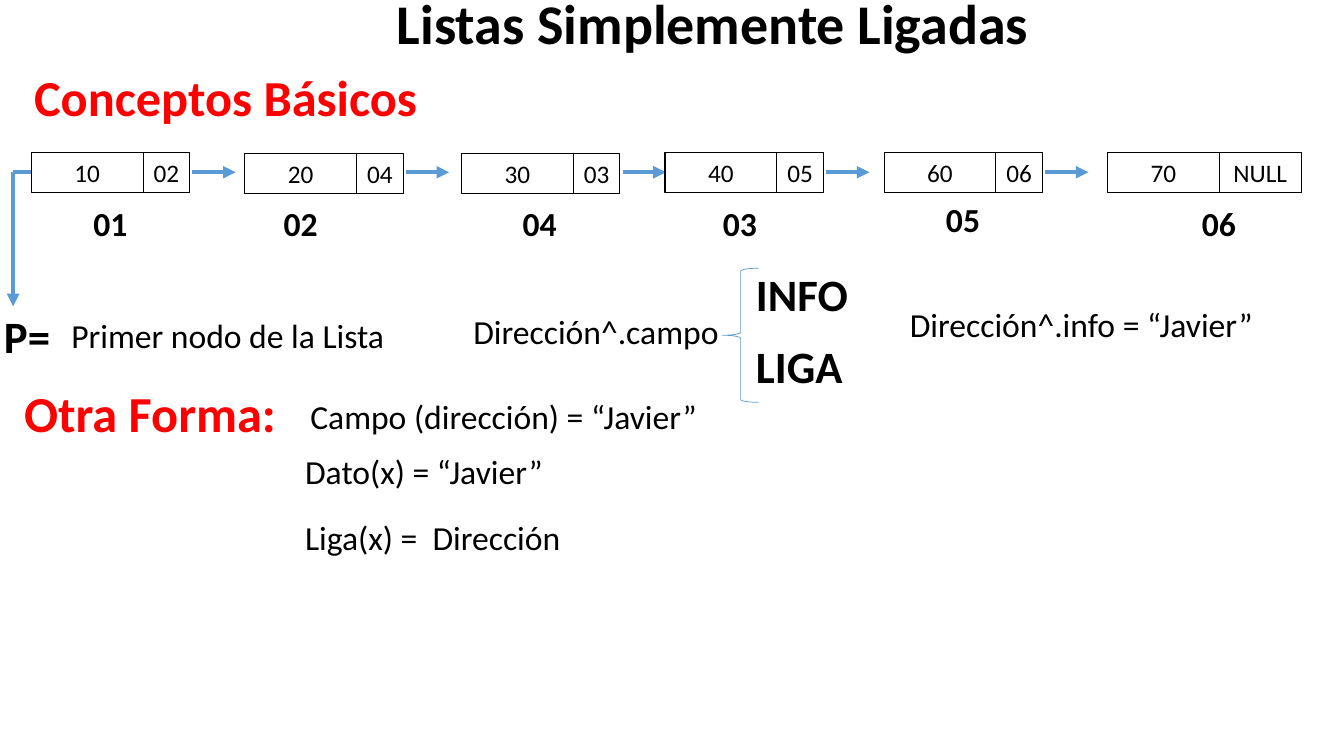
from lxml import etree
from pptx import Presentation
from pptx.dml.color import RGBColor
from pptx.enum.shapes import MSO_CONNECTOR, MSO_SHAPE
from pptx.enum.text import MSO_ANCHOR, MSO_AUTO_SIZE, PP_ALIGN
from pptx.oxml.ns import qn
from pptx.util import Cm, Pt

STRAIGHT = MSO_CONNECTOR.STRAIGHT
RECTANGLE, LEFT_BRACE = MSO_SHAPE.RECTANGLE, MSO_SHAPE.LEFT_BRACE
TOP, MIDDLE = MSO_ANCHOR.TOP, MSO_ANCHOR.MIDDLE
LEFT, CENTER = PP_ALIGN.LEFT, PP_ALIGN.CENTER
NO_AUTOFIT = MSO_AUTO_SIZE.NONE

COLORS = {"text": "000000", "heading": "FF0000", "link": "5B9BD5"}


def write(shape, text, size, bold=False, color="text", align=LEFT, anchor=TOP):
    frame = shape.text_frame
    frame.text = text
    frame.auto_size = NO_AUTOFIT
    frame.word_wrap = False
    frame.vertical_anchor = anchor
    paragraph = frame.paragraphs[0]
    paragraph.alignment = align
    paragraph.font.name = "Calibri"
    paragraph.font.size = Pt(size)
    paragraph.font.bold = bold
    paragraph.font.color.rgb = RGBColor.from_string(COLORS[color])


def draw_link(x1, y1, x2, y2, arrow=True):
    link = slide.shapes.add_connector(STRAIGHT, Cm(x1), Cm(y1), Cm(x2), Cm(y2))
    link.line.color.rgb = RGBColor.from_string(COLORS["link"])
    link.line.width = Pt(3)
    if arrow:
        etree.SubElement(link.line._get_or_add_ln(), qn("a:tailEnd"), type="triangle")
    etree.SubElement(link._element.spPr, qn("a:effectLst"))


prs = Presentation()
prs.slide_width, prs.slide_height = Cm(33.87), Cm(19.05)
slide = prs.slides.add_slide(prs.slide_layouts[5])

title = slide.shapes.title
title.left, title.top, title.width, title.height = Cm(9.75), Cm(-0.41), Cm(17.81), Cm(1.96)
write(title, "Listas Simplemente Ligadas", 40, bold=True)

INFO_WIDTH, LINK_WIDTH, NULL_WIDTH, NODE_HEIGHT = 2.82, 1.17, 2.06, 1.02
LINK_Y, LINK_OFFSET, LINK_LENGTH = 4.34, 4.06, 1.09

nodes = [
    (0.79, 3.84, "10", "02", "01", 1.88, 4.98),
    (6.17, 3.86, "20", "04", "02", 6.68, 4.98),
    (11.63, 3.86, "30", "03", "04", 12.7, 4.98),
    (16.76, 3.84, "40", "05", "03", 17.75, 4.98),
    (22.28, 3.84, "60", "06", "05", 23.37, 4.9),
    (27.91, 3.84, "70", "NULL", "06", 29.82, 4.98),
]
for left, top, info, next_node, address, address_left, address_top in nodes:
    is_last = next_node == "NULL"
    next_width = NULL_WIDTH if is_last else LINK_WIDTH
    for field_left, width, value in [
        (left, INFO_WIDTH, info),
        (left + INFO_WIDTH, next_width, next_node),
    ]:
        field = slide.shapes.add_shape(
            RECTANGLE, Cm(field_left), Cm(top), Cm(width), Cm(NODE_HEIGHT))
        field.shadow.inherit = False
        field.fill.background()
        field.line.color.rgb = RGBColor.from_string(COLORS["text"])
        field.line.width = Pt(0.75)
        write(field, value, 18, align=CENTER, anchor=MIDDLE)
    label = slide.shapes.add_textbox(Cm(address_left), Cm(address_top), Cm(1.8), Cm(1.27))
    write(label, address, 24, bold=True, align=CENTER)
    if not is_last:
        start = left + LINK_OFFSET
        draw_link(start, LINK_Y, start + LINK_LENGTH, LINK_Y)

draw_link(0.79, LINK_Y, 0.33, LINK_Y, arrow=False)
draw_link(0.33, LINK_Y, 0.33, 7.72)

field_brace = slide.shapes.add_shape(LEFT_BRACE, Cm(18.21), Cm(6.76), Cm(0.91), Cm(3.38))
field_brace.shadow.inherit = False
field_brace.fill.background()
field_brace.line.color.rgb = RGBColor.from_string(COLORS["link"])
field_brace.line.width = Pt(0.5)

statements = [
    ("Conceptos Básicos", 0.61, 1.55, 11.3, 1.8, 36, True, "heading"),
    ("P=", -0.15, 7.65, 1.96, 1.63, 32, True, "text"),
    ("Primer nodo de la Lista", 1.55, 7.8, 9.19, 1.27, 24, False, "text"),
    ("Dirección^.campo", 11.68, 7.72, 7.11, 1.27, 24, False, "text"),
    ("INFO", 18.8, 6.6, 3, 1.63, 32, True, "text"),
    ("LIGA", 18.8, 8.41, 3, 1.63, 32, True, "text"),
    ("Dirección^.info = “Javier”", 22.68, 7.54, 9.78, 1.27, 24, False, "text"),
    ("Otra Forma:", 0.36, 9.5, 11.3, 1.8, 36, True, "heading"),
    ("Campo (dirección) = “Javier”", 7.57, 9.86, 10.31, 1.27, 24, False, "text"),
    ("Dato(x) = “Javier”", 7.44, 11.25, 10.31, 1.27, 24, False, "text"),
    ("Liga(x) =  Dirección", 7.44, 12.9, 10.31, 1.27, 24, False, "text"),
]
for text, left, top, width, height, size, bold, color in statements:
    statement = slide.shapes.add_textbox(Cm(left), Cm(top), Cm(width), Cm(height))
    write(statement, text, size, bold, color)

prs.save("out.pptx")
